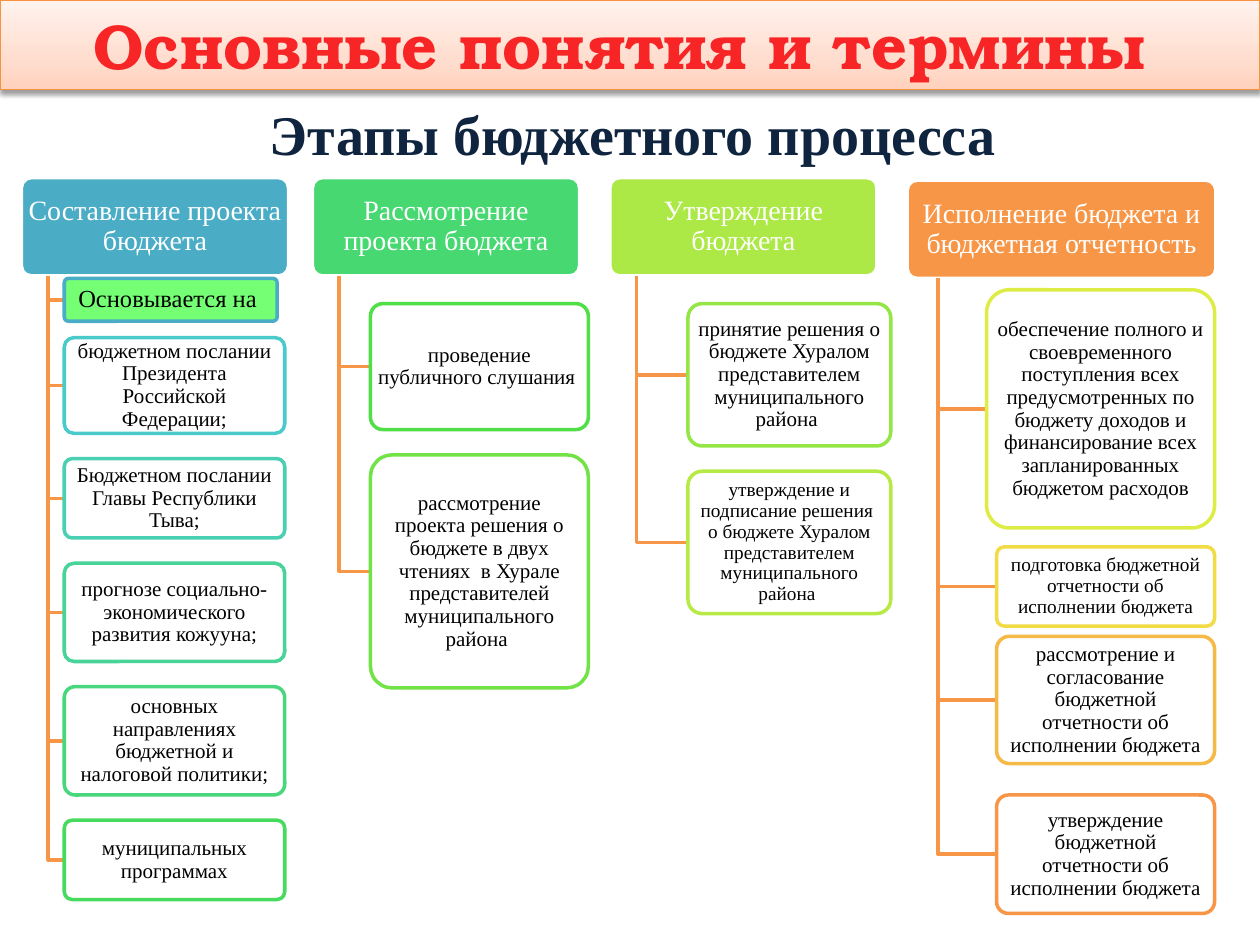
import pptx
import pptx.util
import pptx.oxml
import pptx.oxml.ns
import pptx.dml.color
import pptx.enum.shapes
import pptx.enum.text

Inches, Pt = pptx.util.Inches, pptx.util.Pt
RGBColor = pptx.dml.color.RGBColor
ALIGN = pptx.enum.text.PP_ALIGN
ANCHOR = pptx.enum.text.MSO_ANCHOR
SHAPE = pptx.enum.shapes.MSO_SHAPE

COLORS = {"title": "F72525", "subtitle": "0F243E", "accent": "F69240",
          "branch": "F79646", "white": "FFFFFF", "black": "000000",
          "lead": "66FF66"}
BANNER_STOPS = [(0, "FFD2BD"), (35, "FFDED0"), (100, "FFF2ED")]
BODY_FONT = "Times New Roman"
HEAD_HEIGHT = 0.78

TITLE = "Основные понятия и термины "
SUBTITLE = "Этапы бюджетного процесса"

# Stage: heading, (left, top, width), colour, items
# Item: text, (left, top, width, height), line colour, font size, fill
STAGES = [
    ("Составление проекта бюджета", (0.17, 1.41, 2.12), "4BACC6", [
        ("Основывается на ", (0.51, 2.21, 1.69, 0.34), "4BACC6", 14, "lead"),
        ("бюджетном послании Президента Российской Федерации;",
         (0.51, 2.68, 1.75, 0.76), "4ACACA", 12, "white"),
        ("Бюджетном послании Главы Республики Тыва;",
         (0.51, 3.64, 1.75, 0.63), "49CFB2", 12, "white"),
        ("прогнозе социально-экономического развития кожууна;",
         (0.51, 4.47, 1.75, 0.78), "48D398", 12, "white"),
        ("основных направлениях бюджетной и налоговой политики;",
         (0.51, 5.45, 1.75, 0.86), "48D77C", 12, "white"),
        ("муниципальных программах",
         (0.51, 6.51, 1.75, 0.63), "47DB5D", 12, "white"),
    ]),
    ("Рассмотрение проекта бюджета", (2.48, 1.41, 2.12), "47D872", [
        ("проведение публичного слушания ",
         (2.94, 2.41, 1.73, 1), "50DF47", 12, "white"),
        ("рассмотрение проекта решения о бюджете в двух чтениях  в Хурале "
         "представителей муниципального района ",
         (2.94, 3.61, 1.73, 1.85), "71E346", 12, "white"),
    ]),
    ("Утверждение бюджета", (4.84, 1.41, 2.12), "ACE946", [
        ("принятие решения о бюджете Хуралом представителем "
         "муниципального района ",
         (5.46, 2.41, 1.61, 1.13), "94E646", 12, "white"),
        ("утверждение и подписание решения  о бюджете Хуралом "
         "представителем муниципального района ",
         (5.46, 3.74, 1.61, 1.13), "B8EA46", 11, "white"),
    ]),
    ("Исполнение бюджета и бюджетная отчетность", (7.2, 1.43, 2.45), "F79646", [
        ("обеспечение полного и своевременного поступления всех "
         "предусмотренных по бюджету доходов и финансирование всех "
         "запланированных бюджетом расходов",
         (7.83, 2.3, 1.81, 1.89), "DEED46", 12, "white"),
        ("подготовка бюджетной отчетности об исполнении бюджета",
         (7.91, 4.34, 1.73, 0.63), "F1DB46", 11, "white"),
        ("рассмотрение и согласование бюджетной отчетности об исполнении бюджета",
         (7.91, 5.05, 1.73, 1.01), "F4B946", 12, "white"),
        ("утверждение бюджетной отчетности об исполнении бюджета",
         (7.91, 6.31, 1.73, 0.94), "F79646", 12, "white"),
    ]),
]


def drawing_xml(body):
    """Wrap the first tag of a DrawingML fragment with its namespace."""
    tag, rest = body.split(" ", 1)
    return pptx.oxml.parse_xml(f"{tag} {pptx.oxml.ns.nsdecls('a')} {rest}")


def set_line(shape, color, width):
    shape.line.color.rgb = RGBColor.from_string(color)
    shape.line.width = Pt(width)


def set_text(shape, text, size, color, font=BODY_FONT, bold=False):
    paragraph = shape.text_frame.paragraphs[0]
    paragraph.text = text
    paragraph.alignment = ALIGN.CENTER
    paragraph.font.name = font
    paragraph.font.size = Pt(size)
    paragraph.font.bold = bold
    paragraph.font.color.rgb = RGBColor.from_string(COLORS[color])
    return paragraph


def add_box(slide, text, place, fill, line, size, color, opacity=100):
    shape = slide.shapes.add_shape(SHAPE.ROUNDED_RECTANGLE, *map(Inches, place))
    shape.adjustments[0] = 0.1
    shape.shadow.inherit = False
    shape.fill.solid()
    shape.fill.fore_color.rgb = RGBColor.from_string(fill)
    if opacity < 100:
        fill_color = shape.fill._xPr.find(".//" + pptx.oxml.ns.qn("a:srgbClr"))
        fill_color.append(drawing_xml(f'<a:alpha val="{opacity * 1000}"/>'))
    set_line(shape, line, 2)
    frame = shape.text_frame
    frame.word_wrap = True
    frame.vertical_anchor = ANCHOR.MIDDLE
    frame.margin_left = frame.margin_right = Inches(0.03)
    frame.margin_top = frame.margin_bottom = Inches(0.02)
    set_text(shape, text, size, color).line_spacing = 0.9


def add_branch(slide, x, top, end_x, end_y):
    builder = slide.shapes.build_freeform(Inches(x), Inches(top))
    builder.add_line_segments([(Inches(x), Inches(end_y)),
                               (Inches(end_x), Inches(end_y))], close=False)
    branch = builder.convert_to_shape()
    branch.shadow.inherit = False
    branch.fill.background()
    set_line(branch, COLORS["branch"], 2)


def add_banner(slide):
    banner = slide.shapes.add_shape(
        SHAPE.RECTANGLE, 0, 0, Inches(10), Inches(0.71))
    set_line(banner, COLORS["accent"], 0.75)
    stops = "".join(f'<a:gs pos="{position * 1000}"><a:srgbClr val="{color}"/></a:gs>'
                    for position, color in BANNER_STOPS)
    outline = banner.line._ln
    outline.addprevious(drawing_xml(
        f'<a:gradFill rotWithShape="1"><a:gsLst>{stops}</a:gsLst>'
        '<a:lin ang="16200000" scaled="0"/></a:gradFill>'))
    banner.shadow.inherit = False
    effects = banner.element.spPr.find(pptx.oxml.ns.qn("a:effectLst"))
    effects.append(drawing_xml(
        f'<a:outerShdw blurRad="{Pt(3.1)}" dist="{Pt(1.6)}" dir="5400000" '
        'rotWithShape="0"><a:srgbClr val="000000"><a:alpha val="38000"/>'
        '</a:srgbClr></a:outerShdw>'))
    banner.text_frame.word_wrap = True
    banner.text_frame.vertical_anchor = ANCHOR.TOP
    banner.text_frame.auto_size = pptx.enum.text.MSO_AUTO_SIZE.SHAPE_TO_FIT_TEXT
    set_text(banner, TITLE, 36, "title", "TeX Gyre Bonum", True)


def main():
    presentation = pptx.Presentation()
    presentation.slide_width, presentation.slide_height = Inches(10), Inches(7.5)
    slide = presentation.slides.add_slide(presentation.slide_layouts[6])

    # Title banner and subtitle
    add_banner(slide)
    subtitle = slide.shapes.add_textbox(
        Inches(2.01), Inches(0.74), Inches(6.03), Inches(0.64))
    subtitle.text_frame.word_wrap = False
    subtitle.text_frame.auto_size = pptx.enum.text.MSO_AUTO_SIZE.SHAPE_TO_FIT_TEXT
    set_text(subtitle, SUBTITLE, 32, "subtitle", bold=True)

    # Stage headings, each with a trunk and its items
    for heading, (left, top, width), color, items in STAGES:
        add_box(slide, heading, (left, top, width, HEAD_HEIGHT), color,
                COLORS["white"], 16, "white")
        for text, place, line, size, fill in items:
            item_left, item_top, _, item_height = place
            add_branch(slide, left + width / 10, top + HEAD_HEIGHT,
                       item_left, item_top + item_height / 2)
            add_box(slide, text, place, COLORS[fill], line, size, "black", 90)

    presentation.save("out.pptx")


if __name__ == "__main__":
    main()
